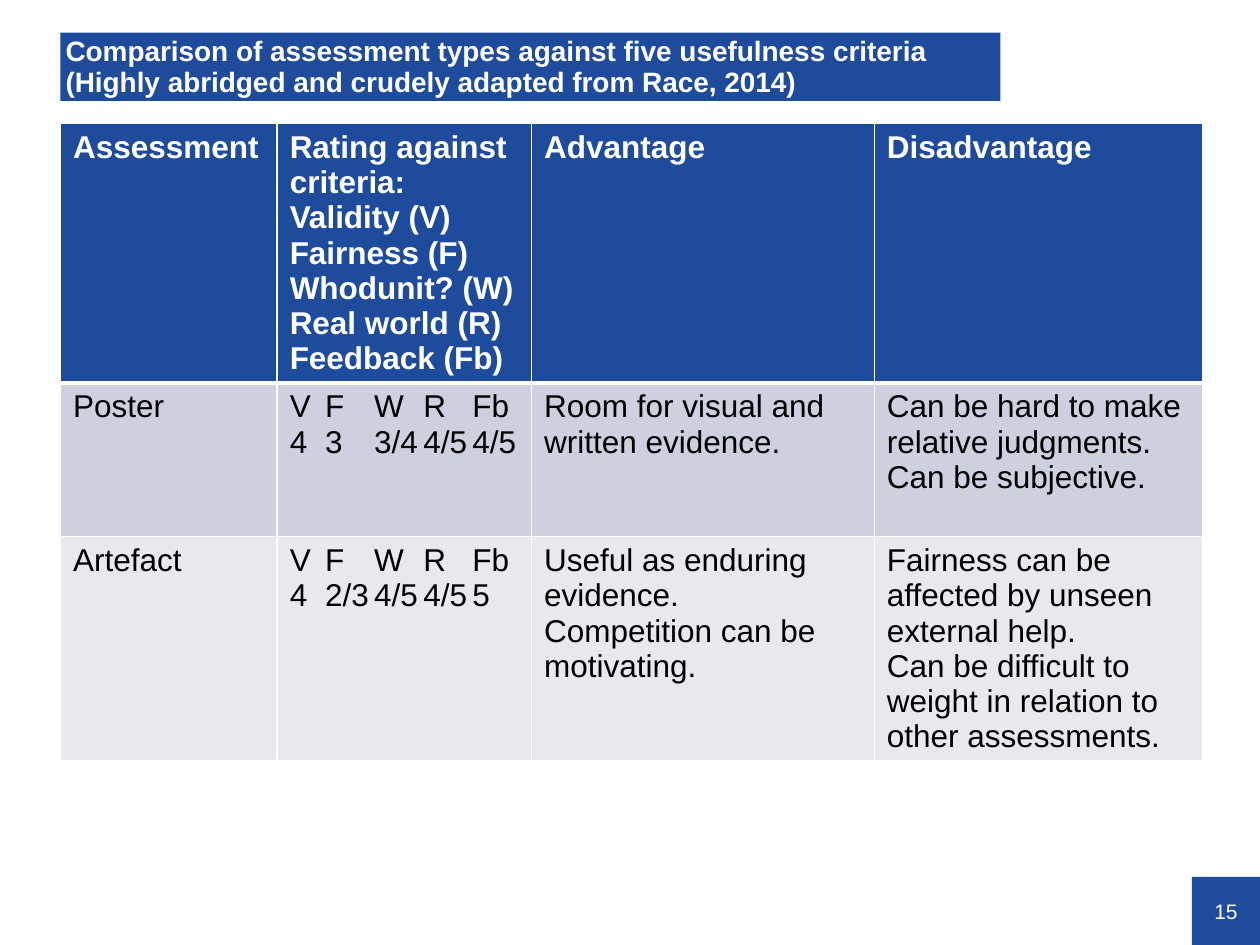
"""Build the slide comparing assessment types against usefulness criteria."""
import lxml.etree
import pptx
import pptx.dml.color
import pptx.enum.shapes
import pptx.enum.text
import pptx.oxml.ns
import pptx.util

Inches = pptx.util.Inches
Pt = pptx.util.Pt
qn = pptx.oxml.ns.qn
ALIGN = pptx.enum.text.PP_ALIGN
MIDDLE = pptx.enum.text.MSO_ANCHOR.MIDDLE

BLUE, WHITE, BLACK = "1E4B9B", "FFFFFF", "000000"
ROW_FILLS = [BLUE, "CDD0DE", "E8E9EF"]
COLUMN_WIDTHS = [1.72, 2.02, 2.72, 2.61]
ROW_HEIGHTS = [2.05, 1.22, 1.78]
RATING_STOPS = [0.28, 0.67, 1.06, 1.45]

TITLE_LINES = [
    "Comparison of assessment types against five usefulness criteria ",
    "(Highly abridged and crudely adapted from Race, 2014)",
]
ASSESSMENTS = [
    [
        ["Assessment"],
        ["Rating against criteria:", "Validity (V)", "Fairness (F)",
         "Whodunit? (W)", "Real world (R)", "Feedback (Fb)"],
        ["Advantage"],
        ["Disadvantage"],
    ],
    [
        ["Poster"],
        ["V\tF\tW\tR\tFb", "4\t3\t3/4\t4/5\t4/5"],
        ["Room for visual and written evidence."],
        ["Can be hard to make relative judgments.", "Can be subjective."],
    ],
    [
        ["Artefact"],
        ["V\tF\tW\tR\tFb", "4\t2/3\t4/5\t4/5\t5"],
        ["Useful as enduring evidence.", "Competition can be motivating."],
        ["Fairness can be affected by unseen external help.",
         "Can be difficult to weight in relation to other assessments."],
    ],
]


def rgb(color):
    """Turn a hex string into a colour."""
    return pptx.dml.color.RGBColor.from_string(color)


def paint(target, color):
    """Give a shape or cell a solid fill."""
    target.fill.solid()
    target.fill.fore_color.rgb = rgb(color)


def add_text(paragraph, text, size, color, bold=False):
    """Add one formatted run."""
    run = paragraph.add_run()
    run.text = text
    run.font.name = "Arial"
    run.font.size = Pt(size)
    run.font.bold = bold
    run.font.color.rgb = rgb(color)


def set_insets(frame, left=0, top=0):
    """Set left and top insets and clear the others."""
    frame.margin_left, frame.margin_top = Inches(left), Inches(top)
    frame.margin_right = frame.margin_bottom = 0


def set_title(slide):
    """Place and fill the title band."""
    title = slide.shapes.title
    title.left, title.top = Inches(0.48), Inches(0.26)
    title.width, title.height = Inches(7.46), Inches(0.54)
    paint(title, BLUE)
    frame = title.text_frame
    frame.word_wrap = True
    frame.auto_size = pptx.enum.text.MSO_AUTO_SIZE.NONE
    frame.vertical_anchor = MIDDLE
    set_insets(frame, 0.04, 0.02)
    paragraph = frame.paragraphs[0]
    paragraph.alignment = ALIGN.LEFT
    paragraph.line_spacing = 0.9
    for index, line in enumerate(TITLE_LINES):
        if index:
            paragraph.add_line_break()
        add_text(paragraph, line, 16, WHITE, True)


def add_page_number(slide, number):
    """Add the page number square in the bottom right corner."""
    square = slide.shapes.add_shape(
        pptx.enum.shapes.MSO_SHAPE.RECTANGLE,
        Inches(9.46), Inches(6.96), Inches(0.54), Inches(0.54))
    square.shadow.inherit = False
    square.line.fill.background()
    paint(square, BLUE)
    frame = square.text_frame
    frame.vertical_anchor = MIDDLE
    set_insets(frame)
    frame.paragraphs[0].alignment = ALIGN.CENTER
    add_text(frame.paragraphs[0], number, 12, WHITE)


def set_borders(cell, top, bottom):
    """Draw white cell borders with the given top and bottom widths."""
    properties = cell._tc.get_or_add_tcPr()
    widths = {"a:lnL": 1, "a:lnR": 1, "a:lnT": top, "a:lnB": bottom}
    for index, (side, width) in enumerate(widths.items()):
        border = lxml.etree.Element(qn(side), w=str(Pt(width)))
        fill = lxml.etree.SubElement(border, qn("a:solidFill"))
        lxml.etree.SubElement(fill, qn("a:srgbClr"), val=WHITE)
        properties.insert(index, border)


def set_tab_stops(paragraph, stops):
    """Set left tab stops given in inches."""
    properties = paragraph._p.get_or_add_pPr()
    tabs = lxml.etree.SubElement(properties, qn("a:tabLst"))
    for stop in stops:
        lxml.etree.SubElement(tabs, qn("a:tab"), pos=str(Inches(stop)), algn="l")


def fill_cell(cell, lines, row):
    """Write and format one cell of the comparison."""
    header = row == 0
    paint(cell, ROW_FILLS[row])
    set_borders(cell, 3 if row == 1 else 1, 3 if header else 1)
    frame = cell.text_frame
    for index, line in enumerate(lines):
        paragraph = frame.add_paragraph() if index else frame.paragraphs[0]
        if "\t" in line:
            set_tab_stops(paragraph, RATING_STOPS)
        add_text(paragraph, line, 18, WHITE if header else BLACK, header)


def add_comparison(slide):
    """Add the table of assessments."""
    table = slide.shapes.add_table(
        len(ROW_HEIGHTS), len(COLUMN_WIDTHS), Inches(0.48), Inches(0.98),
        Inches(sum(COLUMN_WIDTHS)), Inches(sum(ROW_HEIGHTS))).table
    for column, width in zip(table.columns, COLUMN_WIDTHS):
        column.width = Inches(width)
    for row, (height, assessment) in enumerate(zip(ROW_HEIGHTS, ASSESSMENTS)):
        table.rows[row].height = Inches(height)
        for column, lines in enumerate(assessment):
            fill_cell(table.cell(row, column), lines, row)


def main():
    """Build and save the presentation."""
    deck = pptx.Presentation()
    deck.slide_width, deck.slide_height = Inches(10), Inches(7.5)
    slide = deck.slides.add_slide(deck.slide_layouts[5])
    add_page_number(slide, "15")
    set_title(slide)
    add_comparison(slide)
    deck.save("out.pptx")


if __name__ == "__main__":
    main()
